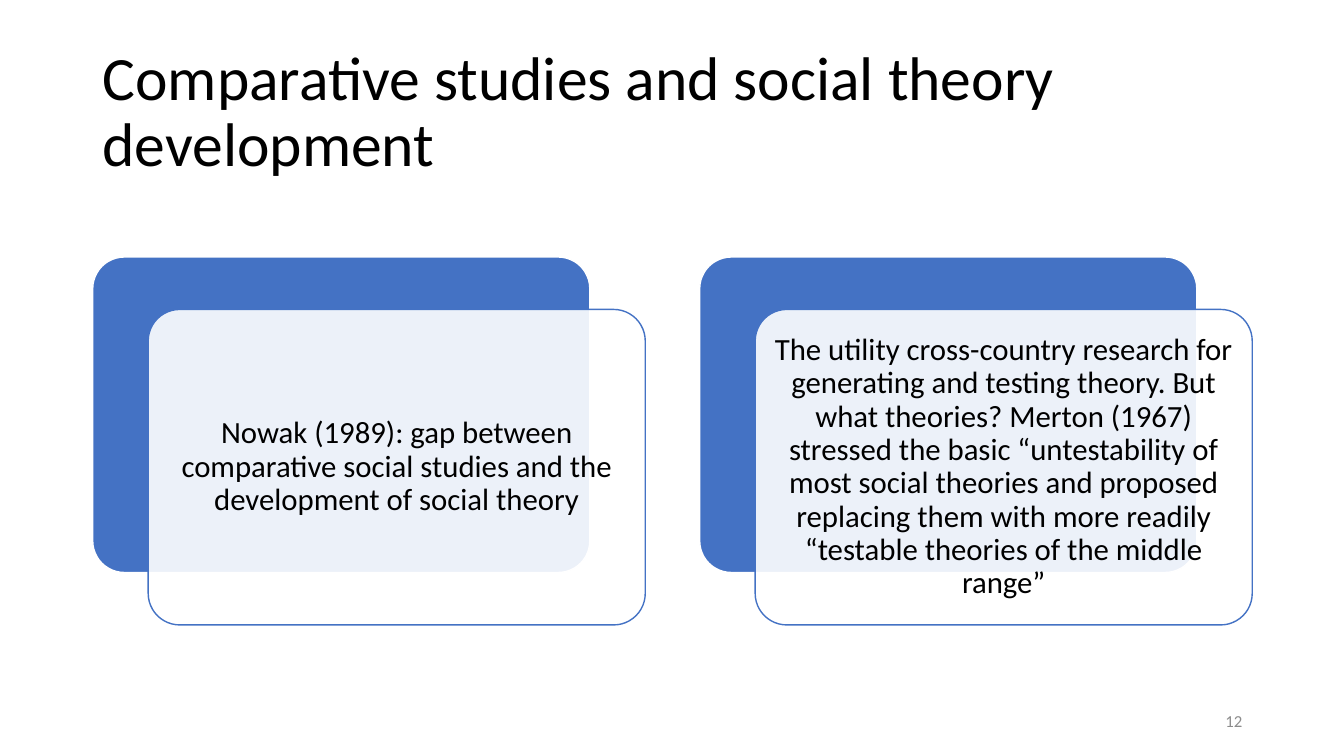
from pptx import Presentation
from pptx.dml.color import RGBColor
from pptx.enum.shapes import MSO_SHAPE
from pptx.enum.text import MSO_ANCHOR, PP_ALIGN
from pptx.oxml.ns import qn
from pptx.util import Inches, Pt
from lxml import etree

ROUNDED = MSO_SHAPE.ROUNDED_RECTANGLE
MIDDLE = MSO_ANCHOR.MIDDLE
LEFT, CENTER, RIGHT = PP_ALIGN.LEFT, PP_ALIGN.CENTER, PP_ALIGN.RIGHT

FONT = "Calibri"
BLACK, WHITE, BLUE, GREY = "000000", "FFFFFF", "4472C4", "8C8C8C"

CARD_W, CARD_H = 4.93, 3.13
CARD_OFFSET_X, CARD_OFFSET_Y = 0.55, 0.52
CARD_PITCH = 6.02
CARD_INSET = 0.09

CARD_TEXTS = [
    "Nowak (1989): gap between comparative social studies and the "
    "development of social theory",
    "The utility cross-country research for generating and testing theory. "
    "But what theories? Merton (1967) stressed the basic “untestability of "
    "most social theories and proposed replacing them with more readily "
    "“testable theories of the middle range”",
]


def rgb(color):
    return RGBColor.from_string(color)


def write(sp, text, size, color, align, line_spacing=1.0):
    tf = sp.text_frame
    tf.word_wrap = True
    tf.vertical_anchor = MIDDLE
    p = tf.paragraphs[0]
    p.text = text
    p.alignment = align
    p.line_spacing = line_spacing
    font = p.runs[0].font
    font.name, font.size = FONT, Pt(size)
    font.color.rgb = rgb(color)


def add_label(s, left, top, width, height, *text_args):
    sp = s.shapes.add_textbox(Inches(left), Inches(top), Inches(width), Inches(height))
    write(sp, *text_args)


def add_panel(s, left, top, fill, line, opacity=100):
    sp = s.shapes.add_shape(ROUNDED, Inches(left), Inches(top),
                            Inches(CARD_W), Inches(CARD_H))
    sp.adjustments[0] = 0.1
    sp.shadow.inherit = False
    sp.fill.solid()
    sp.fill.fore_color.rgb = rgb(fill)
    sp.line.color.rgb = rgb(line)
    sp.line.width = Pt(1)
    if opacity < 100:
        srgb = sp.fill._xPr.find(qn("a:solidFill")).find(qn("a:srgbClr"))
        etree.SubElement(srgb, qn("a:alpha")).set("val", str(opacity * 1000))
    return sp


def add_card(s, left, top, text):
    """Blue back panel with a translucent text panel shifted down and right."""
    add_panel(s, left, top, BLUE, WHITE)
    sp = add_panel(s, left + CARD_OFFSET_X, top + CARD_OFFSET_Y, WHITE, BLUE, 90)
    tf = sp.text_frame
    tf.margin_left = tf.margin_right = Inches(CARD_INSET)
    tf.margin_top = tf.margin_bottom = Inches(CARD_INSET)
    write(sp, text, 22, BLACK, CENTER, 0.9)


def add_cards(s, left, top):
    for i, text in enumerate(CARD_TEXTS):
        add_card(s, left + i * CARD_PITCH, top, text)


def main():
    prs = Presentation()
    prs.slide_width, prs.slide_height = Inches(13.33), Inches(7.5)
    s = prs.slides.add_slide(prs.slide_layouts[6])
    add_label(s, 0.92, 0.4, 11.5, 1.45,
              "Comparative studies and social theory development", 44, BLACK, LEFT, 0.9)
    add_cards(s, 0.92, 2.55)
    add_label(s, 9.42, 6.95, 3, 0.4, "12", 12, GREY, RIGHT)
    prs.save("out.pptx")


if __name__ == "__main__":
    main()
